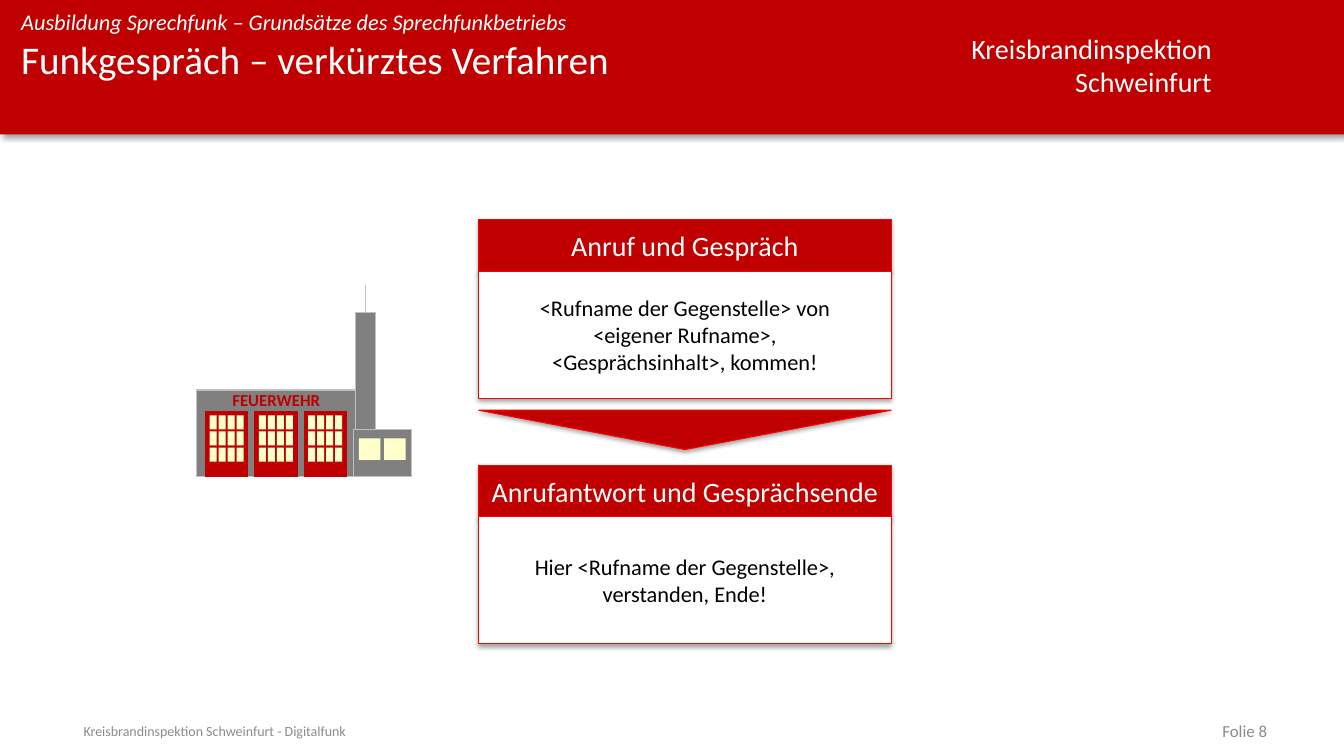
"""Build the training slide about the shortened radio call procedure."""
from dataclasses import dataclass
from itertools import product
from typing import Optional

from lxml.etree import SubElement
from pptx import Presentation
from pptx.dml.color import RGBColor
from pptx.enum.shapes import MSO_CONNECTOR, MSO_SHAPE
from pptx.enum.text import MSO_ANCHOR, MSO_AUTO_SIZE, PP_ALIGN
from pptx.oxml.ns import qn
from pptx.util import Pt

RED, BRIGHT_RED, WHITE, BLACK = "C00000", "FF0000", "FFFFFF", "000000"
WALL, EDGE, PANE, FOOTER_GREY = "808080", "BFBFBF", "FFFFCC", "8C8C8C"
DEFAULT_INSETS = (7.2, 3.6, 7.2, 3.6)
NO_INSETS = (0, 0, 0, 0)
CARD_LEFT, CARD_WIDTH, HEAD_HEIGHT, BODY_HEIGHT = 342, 294.5, 36.7, 90.7


@dataclass(frozen=True)
class Shadow:
    opacity: int
    blur: float
    distance: float
    angle: int


@dataclass(frozen=True)
class Card:
    top: float
    heading: str
    body: str


@dataclass(frozen=True)
class Label:
    frame: tuple[float, float, float, float]
    text: str
    size: float
    color: str = WHITE
    align: PP_ALIGN = PP_ALIGN.LEFT
    anchor: MSO_ANCHOR = MSO_ANCHOR.TOP
    insets: tuple = DEFAULT_INSETS
    italic: bool = False
    wrap: bool = True


HEADER_SHADOW = Shadow(40, 4, 3, 45)
CARD_SHADOW = Shadow(35, 3.1, 1.8, 90)

CARDS = [
    Card(157, "Anruf und Gespräch",
         "<Rufname der Gegenstelle> von\n<eigener Rufname>,\n<Gesprächsinhalt>, kommen!"),
    Card(332.6, "Anrufantwort und Gesprächsende",
         "Hier <Rufname der Gegenstelle>, verstanden, Ende!"),
]

LABELS = [
    Label((684.7, 18.7, 187.9, 55.4), "Kreisbrandinspektion\nSchweinfurt", 20,
          align=PP_ALIGN.RIGHT, wrap=False),
    Label((15.1, 5.8, 607, 19.4), "Ausbildung Sprechfunk – Grundsätze des Sprechfunkbetriebs", 16,
          insets=NO_INSETS, italic=True),
    Label((52.6, 514.8, 579.6, 14.4), "Kreisbrandinspektion Schweinfurt - Digitalfunk", 10,
          color=FOOTER_GREY, anchor=MSO_ANCHOR.MIDDLE),
    Label((688.3, 514.8, 223.9, 14.4), "Folie 8", 12, color=FOOTER_GREY,
          align=PP_ALIGN.RIGHT, anchor=MSO_ANCHOR.MIDDLE),
]


def rgb(color: str) -> RGBColor:
    """Turn a hex string into a colour."""
    return RGBColor.from_string(color)


def write(box, text: str, *, size: float, color: str, align=PP_ALIGN.CENTER,
          anchor=MSO_ANCHOR.MIDDLE, insets=DEFAULT_INSETS, bold=False,
          italic=False, wrap=True) -> None:
    """Fill a box with formatted text, one paragraph per line."""
    frame = box.text_frame
    frame.auto_size = MSO_AUTO_SIZE.NONE
    frame.word_wrap = wrap
    frame.vertical_anchor = anchor
    frame.margin_left, frame.margin_top, frame.margin_right, frame.margin_bottom = map(Pt, insets)
    frame.text = text
    for para in frame.paragraphs:
        para.alignment = align
        for span in para.runs:
            span.font.name = "Calibri"
            span.font.size = Pt(size)
            span.font.bold = bold
            span.font.italic = italic
            span.font.color.rgb = rgb(color)


def cast_shadow(box, shadow: Shadow) -> None:
    """Give a shape a soft black outer shadow."""
    effects = box.element.spPr.find(qn("a:effectLst"))
    outer = SubElement(effects, qn("a:outerShdw"), blurRad=str(Pt(shadow.blur)),
                       dist=str(Pt(shadow.distance)), dir=str(shadow.angle * 60000),
                       algn="ctr", rotWithShape="0")
    tint = SubElement(outer, qn("a:srgbClr"), val=BLACK)
    SubElement(tint, qn("a:alpha"), val=str(shadow.opacity * 1000))


def add_block(shapes, left: float, top: float, width: float, height: float, fill: str,
              line: Optional[str] = None, shadow: Optional[Shadow] = None,
              kind=MSO_SHAPE.RECTANGLE):
    """Draw a filled shape with optional outline and shadow."""
    box = shapes.add_shape(kind, Pt(left), Pt(top), Pt(width), Pt(height))
    box.fill.solid()
    box.fill.fore_color.rgb = rgb(fill)
    if line:
        box.line.color.rgb = rgb(line)
        box.line.width = Pt(0.75)
    else:
        box.line.fill.background()
    box.shadow.inherit = False
    if shadow:
        cast_shadow(box, shadow)
    return box


def add_header(page) -> None:
    """Draw the red banner and place the title on it."""
    title = page.shapes.title
    title.left, title.top, title.width, title.height = Pt(15.1), Pt(25.2), Pt(607), Pt(71.3)
    write(title, "Funkgespräch – verkürztes Verfahren", size=28, color=WHITE,
          align=PP_ALIGN.LEFT, anchor=MSO_ANCHOR.TOP, insets=NO_INSETS)
    banner = add_block(page.shapes, 0, 0, 960, 96, RED, shadow=HEADER_SHADOW)
    title.element.addprevious(banner.element)


def add_label(page, label: Label) -> None:
    """Add a free text box."""
    box = page.shapes.add_textbox(*map(Pt, label.frame))
    write(box, label.text, size=label.size, color=label.color, align=label.align,
          anchor=label.anchor, insets=label.insets, italic=label.italic, wrap=label.wrap)


def add_card(page, card: Card) -> None:
    """Draw one step as a red heading above a white body."""
    shapes = page.shapes.add_group_shape().shapes
    head = add_block(shapes, CARD_LEFT, card.top, CARD_WIDTH, HEAD_HEIGHT,
                     RED, BRIGHT_RED, CARD_SHADOW)
    write(head, card.heading, size=20, color=WHITE)
    body = add_block(shapes, CARD_LEFT, card.top + HEAD_HEIGHT, CARD_WIDTH, BODY_HEIGHT,
                     WHITE, BRIGHT_RED, CARD_SHADOW)
    write(body, card.body, size=16, color=BLACK)


def add_door(shapes, left: float, top: float) -> None:
    """Draw a garage door with three rows of four panes."""
    add_block(shapes, left, top, 30.2, 46.8, RED, RED)
    for row, column in product(range(3), range(4)):
        add_block(shapes, left + 2.9 + 6.4 * column, top + 2.9 + 11.5 * row, 5, 10, PANE)


def add_station(page) -> None:
    """Draw the fire station with tower, hall, doors, antenna and annex."""
    shapes = page.shapes.add_group_shape().shapes
    tower = add_block(shapes, 254.2, 223.2, 14.4, 117.4, WALL, EDGE)
    hall = add_block(shapes, 140.4, 278.6, 113.8, 61.9, WALL, EDGE)
    write(hall, "FEUERWEHR", size=12, color=RED, bold=True,
          anchor=MSO_ANCHOR.TOP, insets=(2.9, 0, 2.9, 2.9))
    for number in range(3):
        add_door(shapes, 146.9 + 35.2 * number, 293.8)
    antenna = shapes.add_connector(MSO_CONNECTOR.STRAIGHT, Pt(261.4), Pt(223.2),
                                   Pt(261.4), Pt(203.8))
    antenna.begin_connect(tower, 0)
    antenna.line.color.rgb = rgb(EDGE)
    antenna.line.width = Pt(0.75)
    SubElement(antenna.element.spPr, qn("a:effectLst"))
    add_block(shapes, 252.7, 306.7, 41, 33.5, WALL, EDGE)
    for number in range(2):
        add_block(shapes, 256.3 + 18 * number, 313.2, 15.4, 15.4, PANE)


def main() -> None:
    """Assemble and save the slide."""
    deck = Presentation()
    deck.slide_width, deck.slide_height = Pt(960), Pt(540)
    page = deck.slides.add_slide(deck.slide_layouts[5])
    add_header(page)
    for label in LABELS:
        add_label(page, label)
    for card in CARDS:
        add_card(page, card)
    arrow = add_block(page.shapes, CARD_LEFT, 293, CARD_WIDTH, 28.1, RED, BRIGHT_RED,
                      CARD_SHADOW, MSO_SHAPE.ISOSCELES_TRIANGLE)
    arrow.rotation = 180
    add_station(page)
    deck.save("out.pptx")


if __name__ == "__main__":
    main()
